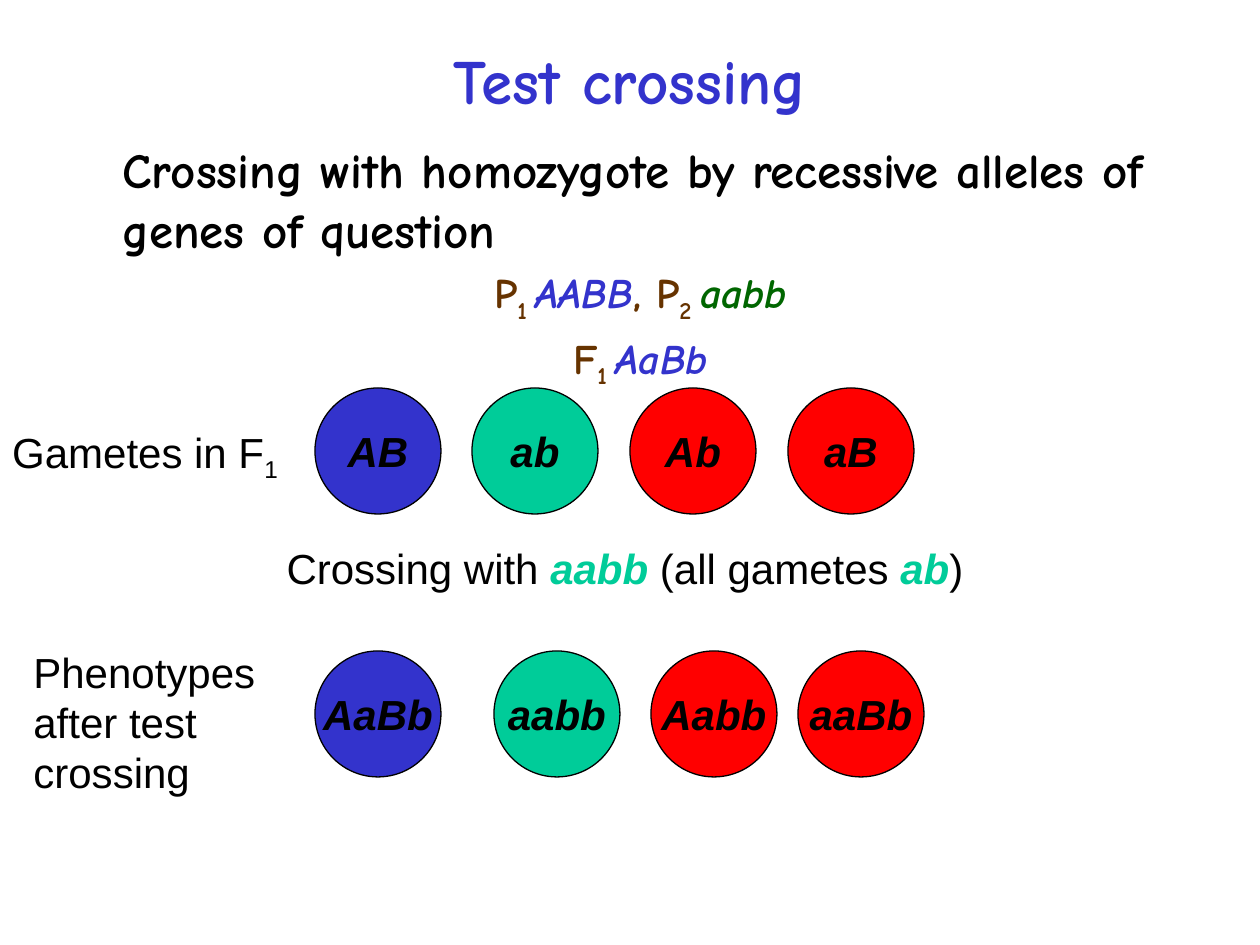
from lxml import etree
from pptx import Presentation
from pptx.dml.color import RGBColor
from pptx.enum.shapes import MSO_SHAPE
from pptx.enum.text import MSO_ANCHOR, PP_ALIGN
from pptx.oxml.ns import qn
from pptx.util import Emu, Pt

CENTER, LEFT = PP_ALIGN.CENTER, PP_ALIGN.LEFT
MIDDLE, TOP = MSO_ANCHOR.MIDDLE, MSO_ANCHOR.TOP
OVAL = MSO_SHAPE.OVAL
PX_PER_INCH = 126
TITLE_ONLY = 5

COLORS = {"black": "000000", "blue": "3333CC", "teal": "00CC99",
          "red": "FF0000", "green": "006600", "brown": "663300"}

# Formats: font attributes, plus "color" and "baseline"
COMIC = {"name": "Comic Neue", "size": Pt(24), "bold": True, "color": "brown"}
GENOTYPE = {**COMIC, "italic": True, "color": "blue"}
COMIC_SUB = {**COMIC, "baseline": -25000}
ARIAL = {"name": "Arial", "size": Pt(24), "color": "black"}
ALLELES = {**ARIAL, "bold": True, "italic": True}
TEAL_ALLELES = {**ALLELES, "color": "teal"}

TITLE = [[("Test crossing", {**COMIC, "size": Pt(36), "color": "blue"})]]
DEFINITION = [("\t", {**COMIC, "size": Pt(32), "color": "green"}),
              ("Crossing with homozygote by recessive alleles of genes of question",
               {**COMIC, "size": Pt(28), "color": "black"})]
PARENTS = [("P", COMIC), ("1 ", COMIC_SUB), ("AABB", GENOTYPE),
           (", P", COMIC), ("2 ", COMIC_SUB),
           ("aabb", {**GENOTYPE, "color": "green"})]
HYBRID = [("F", COMIC), ("1 ", COMIC_SUB), ("AaBb", GENOTYPE)]

# (box in px, alignment, wrap, paragraphs)
LABELS = [
    ((242, 536, 766, 63), CENTER, True,
     [[("Crossing with ", ARIAL), ("aabb", TEAL_ALLELES),
       (" (all gametes ", ARIAL), ("ab", TEAL_ALLELES), (")", ARIAL)]]),
    ((-1, 420, 292, 63), CENTER, False,
     [[("Gametes in F", ARIAL), ("1", {**ARIAL, "baseline": -25000})]]),
    ((21, 640, 281, 164), LEFT, True,
     [[("Phenotypes after test", ARIAL)], [("crossing", ARIAL)]]),
]

DIAMETER = 126
CIRCLE_COLORS = ["blue", "teal", "red", "red"]
# (top, left edges, genotypes)
CIRCLE_ROWS = [
    (388, [315, 472, 630, 788], ["AB", "ab", "Ab", "aB"]),
    (651, [315, 494, 651, 798], ["AaBb", "aabb", "Aabb", "aaBb"]),
]


def px(value):
    return Emu(round(value * 914400 / PX_PER_INCH))


def rgb(name):
    return RGBColor.from_string(COLORS[name])


def write_text(shape, paragraphs, alignment=CENTER, anchor=TOP, wrap=True):
    frame = shape.text_frame
    frame.word_wrap = wrap
    frame.vertical_anchor = anchor
    for index, runs in enumerate(paragraphs):
        paragraph = frame.add_paragraph() if index else frame.paragraphs[0]
        paragraph.alignment = alignment
        for text, style in runs:
            run = paragraph.add_run()
            run.text = text
            for key, value in style.items():
                if key == "color":
                    run.font.color.rgb = rgb(value)
                elif key == "baseline":
                    run._r.get_or_add_rPr().set("baseline", str(value))
                else:
                    setattr(run.font, key, value)


def add_text_box(slide, box, paragraphs, **layout):
    shape = slide.shapes.add_textbox(*map(px, box))
    write_text(shape, paragraphs, **layout)
    return shape


def set_hanging_indent(paragraph):
    """Hang the first line and put 20% of a line before the paragraph."""
    properties = paragraph._p.get_or_add_pPr()
    indent = px(47)
    properties.set("marL", str(indent))
    properties.set("indent", str(-indent))
    before = etree.SubElement(properties, qn("a:spcBef"))
    etree.SubElement(before, qn("a:spcPct")).set("val", "20000")


def add_circle(slide, left, top, color, genotype):
    circle = slide.shapes.add_shape(OVAL, *map(px, (left, top, DIAMETER, DIAMETER)))
    circle.shadow.inherit = False
    circle.fill.solid()
    circle.fill.fore_color.rgb = rgb(color)
    circle.line.color.rgb = rgb("black")
    circle.line.width = Pt(0.75)
    write_text(circle, [[(genotype, ALLELES)]], anchor=MIDDLE, wrap=False)


def main():
    presentation = Presentation()
    presentation.slide_width, presentation.slide_height = px(1260), px(945)
    slide = presentation.slides.add_slide(presentation.slide_layouts[TITLE_ONLY])

    title = slide.shapes.title
    title.left, title.top, title.width, title.height = map(px, (84, 32, 1092, 94))
    write_text(title, TITLE, anchor=MIDDLE)

    body = add_text_box(slide, (63, 126, 1155, 714), [DEFINITION, PARENTS, HYBRID])
    for paragraph in body.text_frame.paragraphs:
        set_hanging_indent(paragraph)
    body.text_frame.paragraphs[0].alignment = LEFT

    for top, lefts, genotypes in CIRCLE_ROWS:
        for left, color, genotype in zip(lefts, CIRCLE_COLORS, genotypes):
            add_circle(slide, left, top, color, genotype)

    for box, alignment, wrap, paragraphs in LABELS:
        add_text_box(slide, box, paragraphs, alignment=alignment, wrap=wrap)

    presentation.save("out.pptx")


if __name__ == "__main__":
    main()
